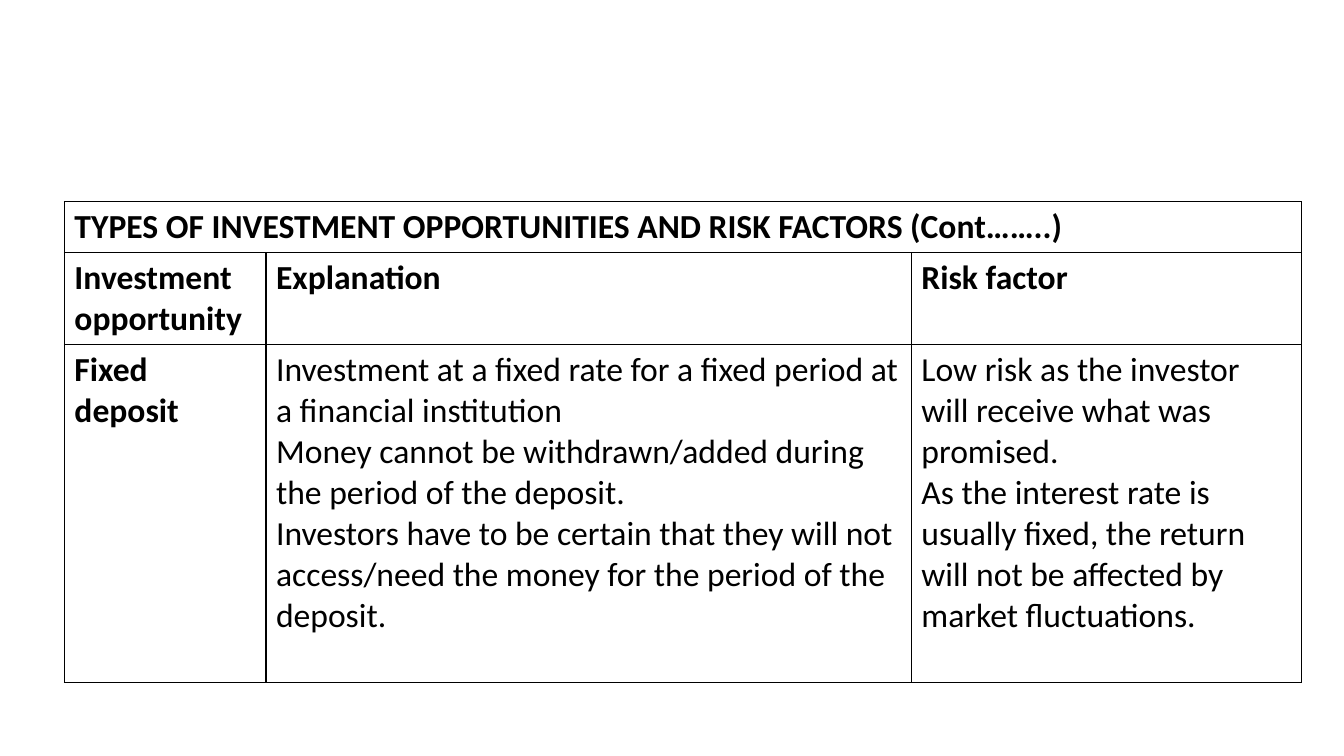
"""Build a slide with a table of investment types and their risks."""
from dataclasses import dataclass

from lxml.etree import SubElement as Sub
from pptx import Presentation
from pptx.dml.color import RGBColor as RGB
from pptx.oxml.ns import qn
from pptx.table import Table, _Cell as Cell
from pptx.util import Pt

INK = "000000"
PAPER = "FFFFFF"
FONT = "Calibri"
SIZE = 24
LEFT, TOP = 46, 144
WIDTHS = [144, 461, 278.5]
HEIGHTS = [36.5, 65.8, 241.5]


@dataclass
class Entry:
    row: int
    col: int
    lines: list[str]
    bold: bool = True
    span: int = 1


ENTRIES = [
    Entry(0, 0, ["TYPES OF INVESTMENT OPPORTUNITIES AND RISK FACTORS (Cont……..)"], span=3),
    Entry(1, 0, ["Investment opportunity"]),
    Entry(1, 1, ["Explanation"]),
    Entry(1, 2, ["Risk factor"]),
    Entry(2, 0, ["Fixed deposit"]),
    Entry(2, 1, [
        "Investment at a fixed rate for a fixed period at a financial institution",
        "Money cannot be withdrawn/added during the period of the deposit.",
        "Investors have to be certain that they will not access/need the money "
        "for the period of the deposit.",
    ], bold=False),
    Entry(2, 2, [
        "Low risk as the investor will receive what was promised.",
        "As the interest rate is usually fixed, the return will not be affected "
        "by market fluctuations.",
    ], bold=False),
]


def color(code: str) -> RGB:
    return RGB.from_string(code)


def frame(cell: Cell) -> None:
    props = cell._tc.get_or_add_tcPr()
    for side in ("lnL", "lnR", "lnT", "lnB"):
        line = Sub(props, qn(f"a:{side}"), w=str(Pt(1)))
        fill = Sub(line, qn("a:solidFill"))
        Sub(fill, qn("a:srgbClr"), val=INK)
    cell.fill.solid()
    cell.fill.fore_color.rgb = color(PAPER)


def write(table: Table, entry: Entry) -> None:
    cell = table.cell(entry.row, entry.col)
    if entry.span > 1:
        cell.merge(table.cell(entry.row, entry.col + entry.span - 1))
    text = cell.text_frame
    for i, line in enumerate(entry.lines):
        para = text.add_paragraph() if i else text.paragraphs[0]
        run = para.add_run()
        run.text = line
        font = run.font
        font.name, font.size, font.bold = FONT, Pt(SIZE), entry.bold
        font.color.rgb = color(INK)


def main() -> None:
    deck = Presentation()
    deck.slide_width, deck.slide_height = Pt(960), Pt(540)
    slide = deck.slides.add_slide(deck.slide_layouts[6])
    table = slide.shapes.add_table(
        len(HEIGHTS), len(WIDTHS), Pt(LEFT), Pt(TOP),
        Pt(sum(WIDTHS)), Pt(sum(HEIGHTS))).table
    table.first_row = table.horz_banding = False
    for col, width in zip(table.columns, WIDTHS):
        col.width = Pt(width)
    for row, height in zip(table.rows, HEIGHTS):
        row.height = Pt(height)
    for cell in table.iter_cells():
        frame(cell)
    for entry in ENTRIES:
        write(table, entry)
    deck.save("out.pptx")


if __name__ == "__main__":
    main()
